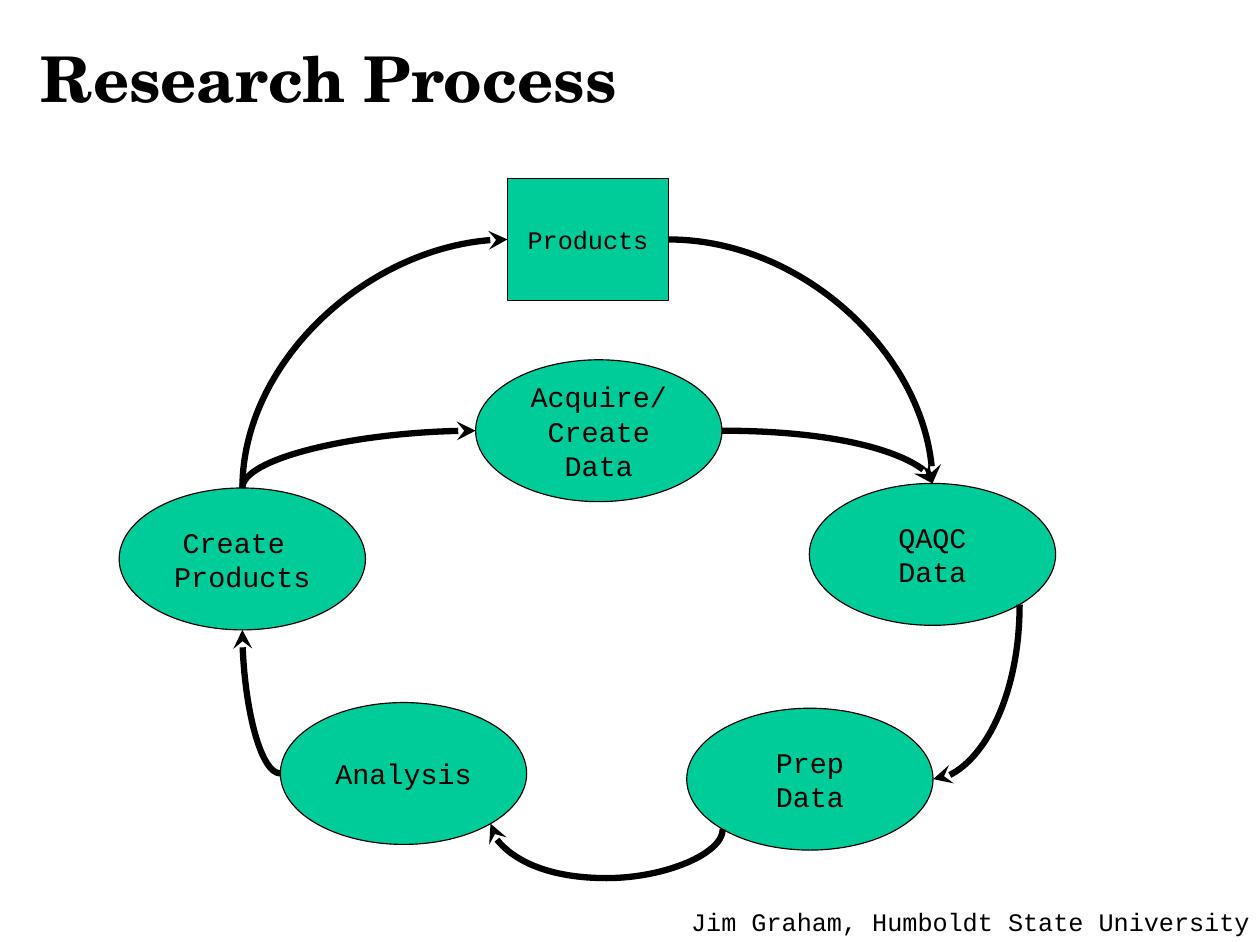
import math

import pptx
import pptx.dml.color
import pptx.enum.shapes
import pptx.enum.text
import pptx.oxml.ns
import pptx.util
from lxml import etree

Inches = pptx.util.Inches
Pt = pptx.util.Pt
qn = pptx.oxml.ns.qn
Shape = pptx.enum.shapes.MSO_SHAPE
Align = pptx.enum.text.PP_ALIGN
Anchor = pptx.enum.text.MSO_ANCHOR

COLOURS = {"ink": "000000", "node": "00CC99", "page": "FFFFFF"}
BODY_FONT = "Courier New"
TITLE_FONT = "TeX Gyre Schola"
STEP_SIZE = (2.17, 1.25)
PRODUCT_SIZE = (1.42, 1.08)
DIAGONAL = math.sqrt(0.5)


class Node:
    """A drawn step, with points on its outline given by direction."""

    def __init__(self, left, top, size):
        self.left, self.top = left, top
        self.width, self.height = size

    def point(self, across, down):
        return (self.left + self.width * (1 + across) / 2,
                self.top + self.height * (1 + down) / 2)


class SlideBuilder:
    def __init__(self, page):
        self.page = page
        page.background.fill.solid()
        page.background.fill.fore_color.rgb = self.colour("page")

    def colour(self, name):
        return pptx.dml.color.RGBColor.from_string(COLOURS[name])

    def add_lines(self, frame, lines, size, font=BODY_FONT, align=Align.LEFT, bold=False):
        for number, line in enumerate(lines):
            para = frame.add_paragraph() if number else frame.paragraphs[0]
            para.alignment = align
            span = para.add_run()
            span.text = line
            span.font.name = font
            span.font.size = Pt(size)
            span.font.bold = bold
            span.font.color.rgb = self.colour("ink")

    def title(self, text, left, top, width, height):
        box = self.page.shapes.title
        box.left, box.top = Inches(left), Inches(top)
        box.width, box.height = Inches(width), Inches(height)
        frame = box.text_frame
        frame.vertical_anchor = Anchor.MIDDLE
        frame.margin_left = frame.margin_right = Inches(0.11)
        frame.margin_top = frame.margin_bottom = Inches(0.06)
        self.add_lines(frame, [text], 40, TITLE_FONT, bold=True)

    def label(self, text, left, top, width, height):
        box = self.page.shapes.add_textbox(
            Inches(left), Inches(top), Inches(width), Inches(height))
        box.text_frame.word_wrap = True
        self.add_lines(box.text_frame, [text], 16)

    def node(self, lines, left, top, kind=Shape.OVAL, size=STEP_SIZE, points=18):
        box = self.page.shapes.add_shape(
            kind, Inches(left), Inches(top), *map(Inches, size))
        box.shadow.inherit = False
        box.fill.solid()
        box.fill.fore_color.rgb = self.colour("node")
        box.line.color.rgb = self.colour("ink")
        box.line.width = Pt(0.75)
        box.text_frame.word_wrap = True
        box.text_frame.vertical_anchor = Anchor.MIDDLE
        self.add_lines(box.text_frame, lines, points, align=Align.CENTER)
        return Node(left, top, size)

    def arrow(self, start, end, vertical=False, dip=None):
        """Curve leaving sideways, or up or down if vertical; dip makes a U."""
        rise = end[1] - start[1]
        if vertical:
            # Turn the ends back a quarter, since the shape is rotated by 90 degrees
            middle_x, middle_y = (start[0] + end[0]) / 2, (start[1] + end[1]) / 2
            start, end = [(middle_x + y - middle_y, middle_y - x + middle_x)
                          for x, y in (start, end)]
        curve = self.page.shapes.add_connector(
            pptx.enum.shapes.MSO_CONNECTOR.CURVE, *map(Inches, start + end))
        properties = curve._element.spPr
        if vertical:
            properties.find(qn("a:xfrm")).set("rot", str(90 * 60000))
        geometry = properties.find(qn("a:prstGeom"))
        if dip is None:
            geometry.set("prst", "curvedConnector2")
        else:
            guide = etree.SubElement(geometry.find(qn("a:avLst")), qn("a:gd"))
            guide.set("name", "adj1")
            guide.set("fmla", f"val {round(dip / rise * 100000)}")
        curve.line.color.rgb = self.colour("ink")
        curve.line.width = Pt(4)
        tail = etree.SubElement(properties.find(qn("a:ln")), qn("a:tailEnd"))
        tail.set("type", "stealth")
        etree.SubElement(properties, qn("a:effectLst"))


def main():
    deck = pptx.Presentation()
    deck.slide_width, deck.slide_height = Inches(11.1), Inches(8.3)
    slide = SlideBuilder(deck.slides.add_slide(deck.slide_layouts[5]))

    # Title and author line
    slide.title("Research Process", 0.25, 0.17, 8.92, 1.02)
    slide.label("Jim Graham, Humboldt State University", 5.99, 7.94, 5.18, 0.38)

    # Steps of the cycle
    acquire = slide.node(["Acquire/Create Data"], 4.19, 3.17)
    check = slide.node(["QAQC", "Data"], 7.13, 4.26)
    prep = slide.node(["Prep", "Data"], 6.05, 6.24)
    analysis = slide.node(["Analysis"], 2.47, 6.19)
    create = slide.node(["Create ", "Products"], 1.05, 4.3)
    products = slide.node(["Products"], 4.47, 1.57, Shape.RECTANGLE, PRODUCT_SIZE, 16)

    # Arrows around the cycle
    top, bottom, left, right = (0, -1), (0, 1), (-1, 0), (1, 0)
    lower_left, lower_right = (-DIAGONAL, DIAGONAL), (DIAGONAL, DIAGONAL)
    for source in (acquire, products):
        slide.arrow(source.point(*right), check.point(*top))
        slide.arrow(create.point(*top), source.point(*left), vertical=True)
    slide.arrow(check.point(*lower_right), prep.point(*right), vertical=True)
    slide.arrow(prep.point(*lower_left), analysis.point(*lower_right),
                vertical=True, dip=0.43)
    slide.arrow(analysis.point(*left), create.point(*bottom))

    deck.save("out.pptx")


if __name__ == "__main__":
    main()
